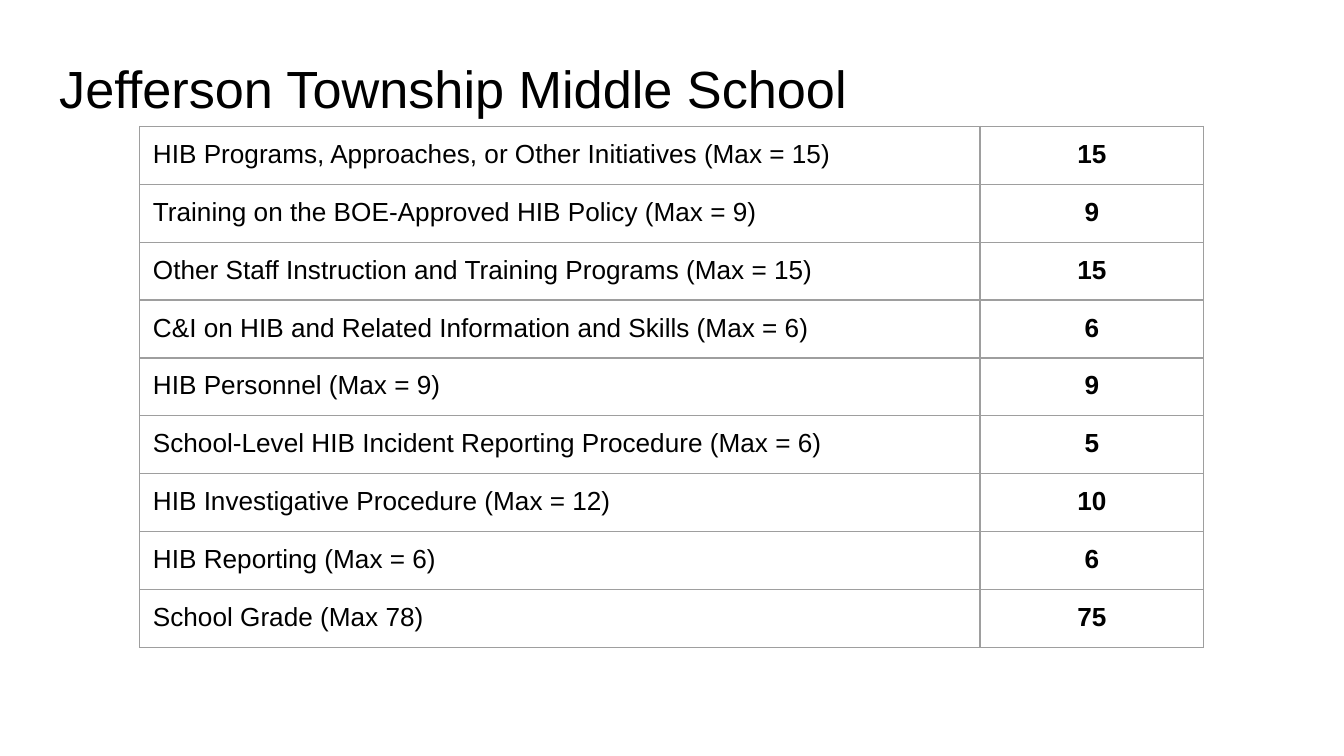
from lxml.etree import SubElement
from pptx import Presentation
from pptx.dml.color import RGBColor
from pptx.enum.text import MSO_ANCHOR, PP_ALIGN
from pptx.oxml.ns import qn
from pptx.util import Cm, Pt

INK, GRID = "000000", "9E9E9E"
INSET = 0.25
ROW = 1.06
COLS = (15.88, 4.23)
SCORES = [
    ("HIB Programs, Approaches, or Other Initiatives (Max = 15)", 15),
    ("Training on the BOE-Approved HIB Policy (Max = 9)", 9),
    ("Other Staff Instruction and Training Programs (Max = 15)", 15),
    ("C&I on HIB and Related Information and Skills (Max = 6)", 6),
    ("HIB Personnel (Max = 9)", 9),
    ("School-Level HIB Incident Reporting Procedure (Max = 6)", 5),
    ("HIB Investigative Procedure (Max = 12)", 10),
    ("HIB Reporting (Max = 6)", 6),
    ("School Grade (Max 78)", 75),
]


def color(code):
    return RGBColor.from_string(code)


def write(frame, text, size=14, bold=False, align=PP_ALIGN.LEFT):
    para = frame.paragraphs[0]
    para.alignment = align
    run = para.add_run()
    run.text = text
    font = run.font
    font.name, font.size, font.bold = "Arial", Pt(size), bold
    font.color.rgb = color(INK)


def pad(item, top=INSET):
    item.margin_left = item.margin_right = item.margin_bottom = Cm(INSET)
    item.margin_top = Cm(top)
    item.vertical_anchor = MSO_ANCHOR.TOP


def border(cell):
    # Borders come before the fill in the cell properties
    props = cell._tc.get_or_add_tcPr()
    for side in ("a:lnL", "a:lnR", "a:lnT", "a:lnB"):
        line = SubElement(props, qn(side), w=str(Pt(0.75)))
        fill = SubElement(line, qn("a:solidFill"))
        SubElement(fill, qn("a:srgbClr"), val=GRID)


def add_title(slide, text):
    box = slide.shapes.add_textbox(Cm(0.87), Cm(0.74), Cm(23.67), Cm(1.43))
    frame = box.text_frame
    frame.word_wrap = True
    pad(frame, top=0.33)
    write(frame, text, size=28)


def add_scores(slide):
    shape = slide.shapes.add_table(
        len(SCORES), len(COLS), Cm(2.64), Cm(2.39),
        Cm(sum(COLS)), Cm(ROW * len(SCORES)))
    table = shape.table
    table.first_row = table.horz_banding = False
    for col, width in zip(table.columns, COLS):
        col.width = Cm(width)
    for row, (label, score) in zip(table.rows, SCORES):
        row.height = Cm(ROW)
        name, mark = row.cells
        for cell in (name, mark):
            pad(cell)
            border(cell)
            cell.fill.background()
        write(name.text_frame, label)
        write(mark.text_frame, str(score), bold=True, align=PP_ALIGN.CENTER)


def main():
    deck = Presentation()
    deck.slide_width, deck.slide_height = Cm(25.4), Cm(14.29)
    slide = deck.slides.add_slide(deck.slide_layouts[6])

    # Heading
    add_title(slide, "Jefferson Township Middle School")

    # Score table
    add_scores(slide)

    deck.save("out.pptx")


if __name__ == "__main__":
    main()
